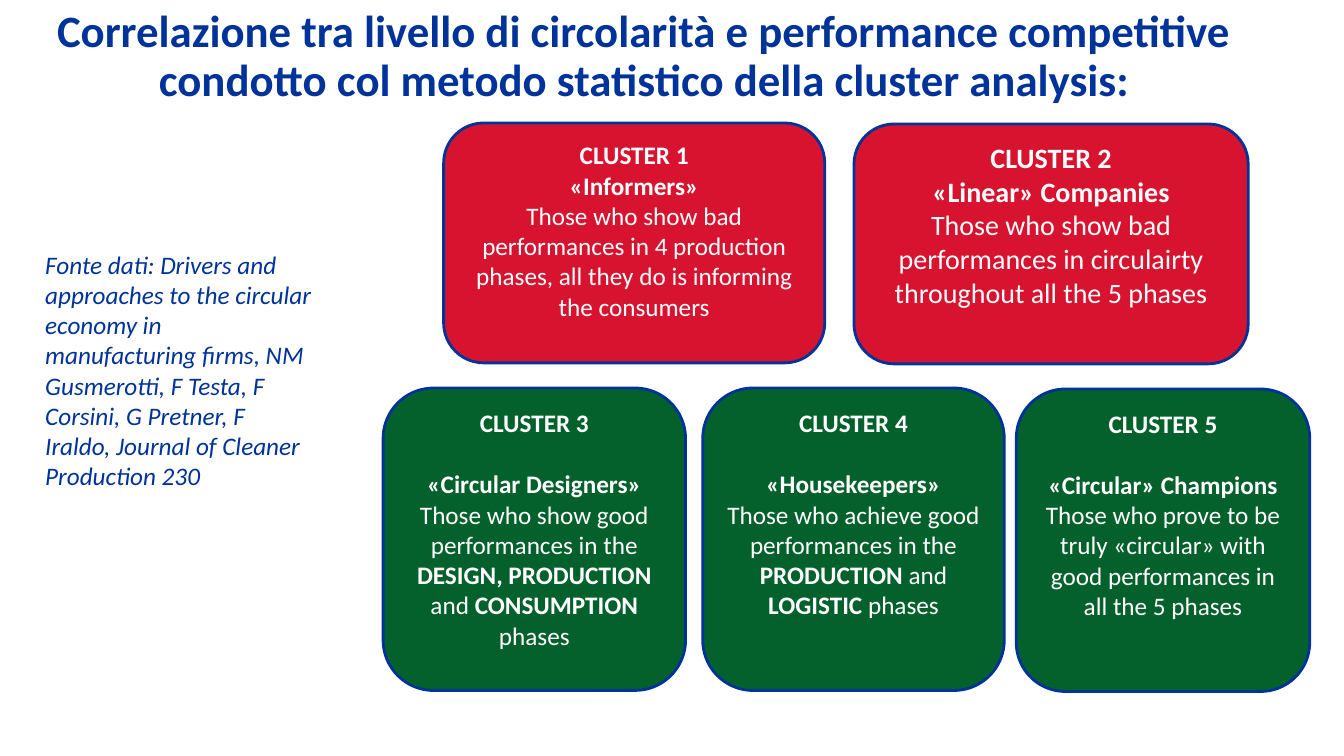
from dataclasses import dataclass

from lxml.etree import SubElement
from pptx import Presentation
from pptx.dml.color import RGBColor as RGB
from pptx.enum.shapes import MSO_SHAPE as Shape
from pptx.enum.text import MSO_ANCHOR as Anchor, MSO_AUTO_SIZE as Fit, PP_ALIGN as Align
from pptx.oxml.ns import qn
from pptx.util import Inches, Pt


@dataclass(frozen=True)
class Theme:
    font: str = "Calibri"
    blue: RGB = RGB(0x00, 0x33, 0x99)
    red: RGB = RGB(0xD6, 0x0C, 0x29)
    green: RGB = RGB(0x05, 0x61, 0x2C)
    white: RGB = RGB(0xFF, 0xFF, 0xFF)
    head: int = 32
    large: int = 20
    text: int = 18
    edge: int = 2


THEME = Theme()
TITLE = ("Correlazione tra livello di circolarità e performance competitive "
         "condotto col metodo statistico della cluster analysis:")
NOTE = ("Fonte dati: Drivers and approaches to the circular economy in "
        "manufacturing firms, NM Gusmerotti, F Testa, F Corsini, G Pretner, "
        "F Iraldo, Journal of Cleaner Production 230")

# Each card: box, size, heading, name, description runs (text, bold)
WEAK = [
    ((4.4, 1.22, 3.78, 2.38), THEME.text, "CLUSTER 1", "«Informers»",
     [("Those who show bad performances in 4 production phases, "
       "all they do is informing the consumers", False)]),
    ((8.47, 1.23, 3.91, 2.38), THEME.large, "CLUSTER 2", "«Linear» Companies",
     [("Those who show bad performances in circulairty "
       "throughout all the 5 phases", False)]),
]
STRONG = [
    ((3.8, 3.85, 3, 3), THEME.text, "CLUSTER 3", "«Circular Designers»",
     [("Those who show good performances in the ", False),
      ("DESIGN, PRODUCTION ", True), ("and ", False),
      ("CONSUMPTION ", True), ("phases", False)]),
    ((6.97, 3.85, 2.99, 3), THEME.text, "CLUSTER 4", "«Housekeepers»",
     [("Those who achieve good performances in the ", False),
      ("PRODUCTION ", True), ("and ", False),
      ("LOGISTIC ", True), ("phases", False)]),
    ((10.08, 3.86, 2.91, 3), THEME.text, "CLUSTER 5", "«Circular» Champions",
     [("Those who prove to be truly «circular» with good performances "
       "in all the 5 phases", False)]),
]
# Fill, opacity in percent, points between heading and name, cards
GROUPS = [(THEME.red, 97, 0, WEAK), (THEME.green, 100, 22, STRONG)]


def place(box):
    return [Inches(n) for n in box]


def write(para, text, size, color, bold=False, italic=False):
    run = para.add_run()
    run.text = text
    font = run.font
    font.name, font.size = THEME.font, Pt(size)
    font.bold, font.italic = bold, italic
    font.color.rgb = color


def add_title(slide):
    title = slide.shapes.title
    title.left, title.top, title.width, title.height = place((0.42, 0.3, 11.94, 0.54))
    frame = title.text_frame
    frame.auto_size, frame.vertical_anchor = Fit.NONE, Anchor.MIDDLE
    para = frame.paragraphs[0]
    para.alignment, para.line_spacing = Align.CENTER, 0.9
    write(para, TITLE, THEME.head, THEME.blue, bold=True)


def add_note(slide):
    frame = slide.shapes.add_textbox(*place((0.35, 2.42, 2.88, 2.83))).text_frame
    frame.word_wrap = True
    write(frame.paragraphs[0], NOTE, THEME.text, THEME.blue, italic=True)


def add_card(slide, fill, alpha, gap, card):
    box, size, head, name, about = card
    shape = slide.shapes.add_shape(Shape.ROUNDED_RECTANGLE, *place(box))
    shape.shadow.inherit = False
    shape.fill.solid()
    shape.fill.fore_color.rgb = fill
    if alpha < 100:
        color = shape.fill._xPr.find(".//" + qn("a:srgbClr"))
        SubElement(color, qn("a:alpha"), val=str(alpha * 1000))
    shape.line.color.rgb = THEME.blue
    shape.line.width = Pt(THEME.edge)
    frame = shape.text_frame
    frame.word_wrap, frame.vertical_anchor = True, Anchor.TOP
    for i, runs in enumerate([[(head, True)], [(name, True)], about]):
        para = frame.add_paragraph() if i else frame.paragraphs[0]
        para.alignment = Align.CENTER
        if i == 1 and gap:
            para.space_before = Pt(gap)
        for text, bold in runs:
            write(para, text, size, THEME.white, bold)


def main():
    deck = Presentation()
    deck.slide_width, deck.slide_height = Inches(13.33), Inches(7.5)
    slide = deck.slides.add_slide(deck.slide_layouts[5])
    add_title(slide)
    for fill, alpha, gap, cards in GROUPS:
        for card in cards:
            add_card(slide, fill, alpha, gap, card)
    add_note(slide)
    deck.save("out.pptx")


if __name__ == "__main__":
    main()
